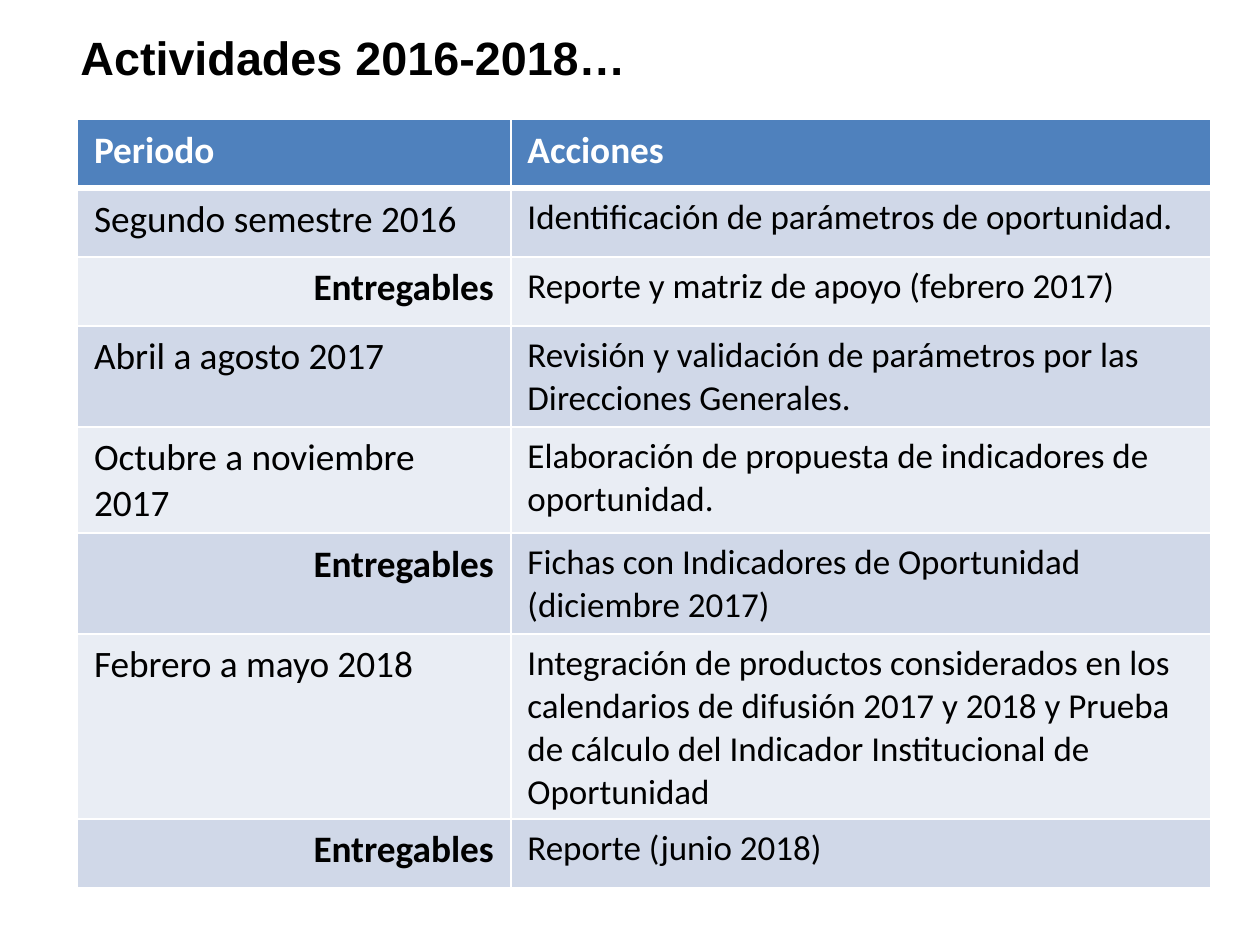
from pptx import Presentation
from pptx.dml.color import RGBColor
from pptx.enum.text import MSO_ANCHOR, PP_ALIGN
from pptx.oxml.xmlchemy import OxmlElement
from pptx.util import Inches, Pt

COLORS = {
    "header": "4F81BD",
    "band_dark": "D0D8E8",
    "band_light": "E9EDF4",
    "white": "FFFFFF",
    "black": "000000",
}
ROW_HEIGHT = 0.41
TABLE_HEIGHT = 4.56
DELIVERABLE = "Entregables"
ACTIVITIES = [
    ("Periodo", "Acciones"),
    ("Segundo semestre 2016", "Identificación de parámetros de oportunidad."),
    (DELIVERABLE, "Reporte y matriz de apoyo (febrero 2017)"),
    ("Abril a agosto 2017",
     "Revisión y validación de parámetros por las Direcciones Generales."),
    ("Octubre a noviembre 2017",
     "Elaboración de propuesta de indicadores de oportunidad."),
    (DELIVERABLE, "Fichas con Indicadores de Oportunidad (diciembre 2017)"),
    ("Febrero a mayo 2018",
     "Integración de productos considerados en los calendarios de difusión "
     "2017 y 2018 y Prueba de cálculo del Indicador Institucional de Oportunidad"),
    (DELIVERABLE, "Reporte (junio 2018)"),
]


def add_run(p, text, font, size, color, bold):
    r = p.add_run()
    r.text = text
    r.font.name = font
    r.font.size = Pt(size)
    r.font.bold = bold
    r.font.color.rgb = RGBColor.from_string(COLORS[color])


def set_borders(cell, bottom_width):
    tcPr = cell._tc.get_or_add_tcPr()
    widths = {"a:lnL": 1, "a:lnR": 1, "a:lnT": 1, "a:lnB": bottom_width}
    for i, (tag, width) in enumerate(widths.items()):
        ln = OxmlElement(tag)
        ln.set("w", str(Pt(width)))
        fill = OxmlElement("a:solidFill")
        clr = OxmlElement("a:srgbClr")
        clr.set("val", COLORS["white"])
        fill.append(clr)
        ln.append(fill)
        tcPr.insert(i, ln)


prs = Presentation()
prs.slide_width = Inches(7.5)
prs.slide_height = Inches(7.5 * 3 / 4)
s = prs.slides.add_slide(prs.slide_layouts[6])

title = s.shapes.add_textbox(Inches(0.38), Inches(-0.01), Inches(6.75), Inches(0.7))
tf = title.text_frame
tf.word_wrap = True
tf.vertical_anchor = MSO_ANCHOR.MIDDLE
add_run(tf.paragraphs[0], "Actividades 2016-2018…", "Arial", 20, "black", True)

frame = s.shapes.add_table(
    len(ACTIVITIES), 2, Inches(0.46), Inches(0.71),
    Inches(6.75), Inches(TABLE_HEIGHT))
table = frame.table
for column, width in zip(table.columns, (2.58, 4.17)):
    column.width = Inches(width)

for i, activity in enumerate(ACTIVITIES):
    table.rows[i].height = Inches(ROW_HEIGHT)
    is_header = i == 0
    band = "header" if is_header else "band_dark" if i % 2 else "band_light"
    for j, text in enumerate(activity):
        cell = table.cell(i, j)
        cell.fill.solid()
        cell.fill.fore_color.rgb = RGBColor.from_string(COLORS[band])
        set_borders(cell, 3 if is_header else 1)
        p = cell.text_frame.paragraphs[0]
        if text == DELIVERABLE:
            p.alignment = PP_ALIGN.RIGHT
        add_run(p, text, "Calibri", 16 if is_header or j == 0 else 15,
                "white" if is_header else "black",
                is_header or text == DELIVERABLE)
frame.height = Inches(TABLE_HEIGHT)

prs.save("out.pptx")
